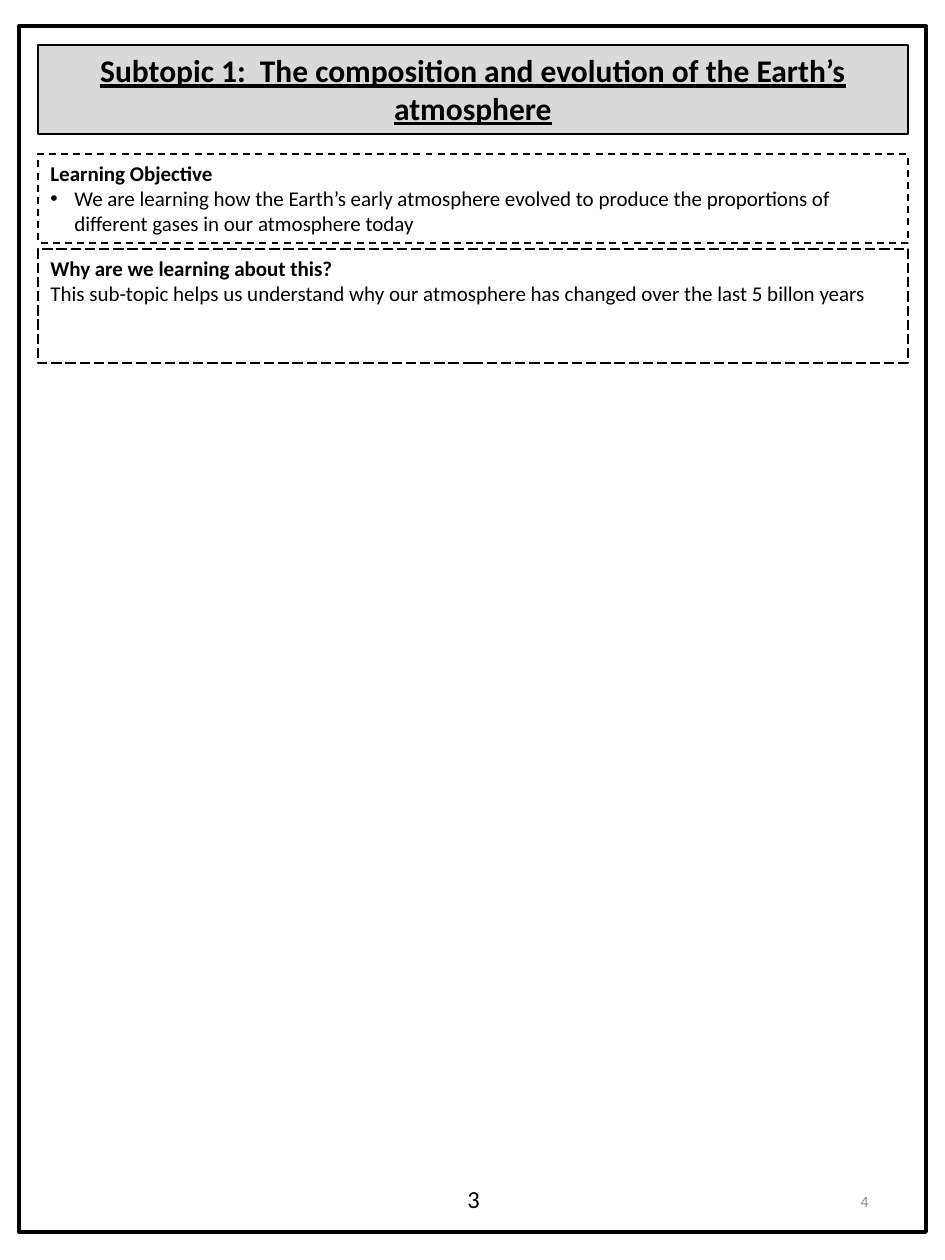
import pptx
import pptx.util
import pptx.dml.color
import pptx.enum.dml
import pptx.enum.shapes
import pptx.enum.text
from dataclasses import dataclass
from lxml import etree

EMU_PER_PX = 914400 / 126
ALIGN = pptx.enum.text.PP_ALIGN
ANCHOR = pptx.enum.text.MSO_ANCHOR
DASH = pptx.enum.dml.MSO_LINE


@dataclass(frozen=True)
class Theme:
    font: str = "Calibri"
    ink: str = "000000"
    banner: str = "D9D9D9"
    muted: str = "8C8C8C"
    title_size: int = 18
    body_size: int = 12
    page_size: int = 14
    number_size: int = 9


def px(length):
    return pptx.util.Emu(round(length * EMU_PER_PX))


def rgb(colour):
    return pptx.dml.color.RGBColor.from_string(colour)


def write(para, text, *, font, size, colour, bold=False, underline=False,
          align=ALIGN.LEFT, bullet_indent=0):
    """Put one formatted span of text in a paragraph."""
    para.alignment = align
    span = para.add_run()
    span.text = text
    span.font.name = font
    span.font.size = pptx.util.Pt(size)
    span.font.bold = bold
    span.font.underline = underline
    span.font.color.rgb = rgb(colour)
    if bullet_indent:
        properties = para._p.get_or_add_pPr()
        properties.set("marL", str(px(bullet_indent)))
        properties.set("indent", str(-px(bullet_indent)))
        namespace = properties.nsmap["a"]
        bullet_font = etree.SubElement(properties, f"{{{namespace}}}buFont")
        bullet_font.set("typeface", "Arial")
        bullet = etree.SubElement(properties, f"{{{namespace}}}buChar")
        bullet.set("char", "•")


class Worksheet:
    """Holds the theme and the current page."""

    def __init__(self, page, theme):
        self.page = page
        self.theme = theme

    def panel(self, left, top, width, height, *, weight, dash=None, fill=None):
        box = self.page.shapes.add_shape(
            pptx.enum.shapes.MSO_SHAPE.RECTANGLE,
            px(left), px(top), px(width), px(height))
        box.shadow.inherit = False
        if fill:
            box.fill.solid()
            box.fill.fore_color.rgb = rgb(fill)
        else:
            box.fill.background()
        box.line.color.rgb = rgb(self.theme.ink)
        box.line.width = pptx.util.Pt(weight)
        if dash:
            box.line.dash_style = dash
        box.text_frame.word_wrap = True
        box.text_frame.vertical_anchor = ANCHOR.TOP
        return box

    def banner(self, left, top, width, height, text):
        box = self.panel(left, top, width, height, weight=0.75,
                         fill=self.theme.banner)
        write(box.text_frame.paragraphs[0], text, font=self.theme.font,
              size=self.theme.title_size, colour=self.theme.ink,
              bold=True, underline=True, align=ALIGN.CENTER)

    def note(self, left, top, width, height, heading, body, *, weight, dash,
             bullet_indent=0):
        frame = self.panel(left, top, width, height, weight=weight,
                           dash=dash).text_frame
        style = dict(font=self.theme.font, size=self.theme.body_size,
                     colour=self.theme.ink)
        write(frame.paragraphs[0], heading, bold=True, **style)
        write(frame.add_paragraph(), body, bullet_indent=bullet_indent, **style)

    def label(self, left, top, width, height, text, *, size, colour,
              align=ALIGN.LEFT, anchor=ANCHOR.TOP):
        box = self.page.shapes.add_textbox(
            px(left), px(top), px(width), px(height))
        box.text_frame.word_wrap = True
        box.text_frame.vertical_anchor = anchor
        write(box.text_frame.paragraphs[0], text, font=self.theme.font,
              size=size, colour=colour, align=align)


def main():
    deck = pptx.Presentation()
    deck.slide_width, deck.slide_height = px(945), px(1260)
    theme = Theme()
    sheet = Worksheet(deck.slides.add_slide(deck.slide_layouts[6]), theme)
    left, width = 38, 870

    # Page border
    sheet.panel(19, 26, 907, 1206, weight=2.25)

    # Title banner
    sheet.banner(left, 45, width, 89,
                 "Subtopic 1:  The composition and evolution of the Earth’s "
                 "atmosphere")

    # Objective and reason
    sheet.note(left, 154, width, 89, "Learning Objective",
               "We are learning how the Earth’s early atmosphere evolved to "
               "produce the proportions of different gases in our atmosphere "
               "today",
               weight=1, dash=DASH.DASH, bullet_indent=24)
    sheet.note(left, 249, width, 114, "Why are we learning about this?",
               "This sub-topic helps us understand why our atmosphere has "
               "changed over the last 5 billon years",
               weight=0.75, dash=DASH.LONG_DASH)

    # Page numbers
    sheet.label(455, 1178, 67, 43, "3", size=theme.page_size, colour=theme.ink)
    sheet.label(668, 1168, 213, 67, "4", size=theme.number_size,
                colour=theme.muted, align=ALIGN.RIGHT, anchor=ANCHOR.MIDDLE)

    deck.save("out.pptx")


if __name__ == "__main__":
    main()
